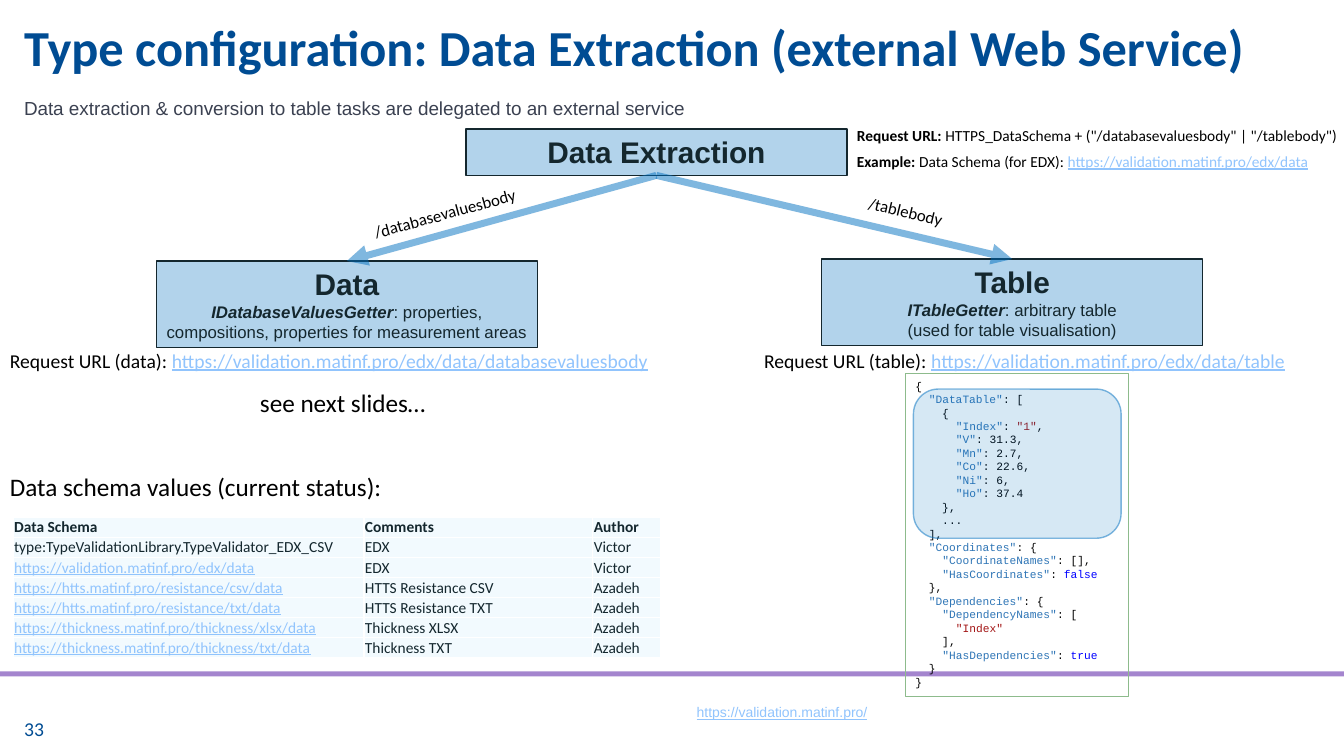
from typing import NamedTuple

from lxml.etree import SubElement as Sub
from pptx import Presentation
from pptx.dml.color import RGBColor as Rgb
from pptx.enum.shapes import MSO_CONNECTOR as Link, MSO_SHAPE as Kind
from pptx.enum.text import MSO_ANCHOR as Anchor, PP_ALIGN as Align
from pptx.oxml.ns import qn
from pptx.util import Inches, Pt

COLORS = {
    "black": "000000", "white": "FFFFFF", "ink": "14272E", "title": "004C93",
    "gray": "3B4151", "link": "91C4FD", "blue": "0070C0", "cyan": "00B0F0",
    "purple": "A485CE", "green": "8DBB8C", "key": "2E75B6", "value": "A31515",
    "bool": "0000FF",
}


class Span(NamedTuple):
    text: str
    color: str = "black"
    size: float = 12
    font: str = "Calibri"
    bold: bool = False
    italic: bool = False


class Label(NamedTuple):
    left: float
    top: float
    width: float
    height: float
    lines: list
    inset: tuple = (0.1, 0.05)
    turn: float = 0
    gap: float = 0


class Node(NamedTuple):
    left: float
    top: float
    height: float
    name: str
    notes: list


def paint(name: str) -> Rgb:
    return Rgb.from_string(COLORS[name])


def fade(root, percent: int) -> None:
    """Set the opacity of the colours that have none yet."""
    for tone in root.iter(qn("a:srgbClr")):
        if not len(tone):
            Sub(tone, qn("a:alpha"), val=str(percent * 1000))


def write(frame, lines: list, align=Align.LEFT, gap: float = 0, pitch: float = 0) -> None:
    for row, spans in enumerate(lines):
        para = frame.add_paragraph() if row else frame.paragraphs[0]
        para.alignment = align
        if row and gap:
            para.space_before = Pt(gap)
        if pitch:
            para.line_spacing = Pt(pitch)
        for span in spans:
            run = para.add_run()
            run.text = span.text
            font = run.font
            font.name, font.size = span.font, Pt(span.size)
            font.bold, font.italic = span.bold, span.italic
            font.color.rgb = paint(span.color)
            font.underline = span.color == "link"


def add_label(slide, label: Label) -> None:
    box = slide.shapes.add_textbox(*map(Inches, label[:4]))
    box.rotation = label.turn
    frame = box.text_frame
    frame.word_wrap = True
    side, edge = map(Inches, label.inset)
    frame.margin_left = frame.margin_right = side
    frame.margin_top = frame.margin_bottom = edge
    write(frame, label.lines, gap=label.gap)


def add_box(slide, kind, place: tuple, fill: str = "", alpha: int = 100,
            line: str = "", width: float = 1, clear: int = 100):
    box = slide.shapes.add_shape(kind, *map(Inches, place))
    box.shadow.inherit = False
    if fill:
        box.fill.solid()
        box.fill.fore_color.rgb = paint(fill)
        fade(box.element.spPr, alpha)
    else:
        box.fill.background()
    if line:
        box.line.color.rgb = paint(line)
        box.line.width = Pt(width)
        fade(box.element.spPr, clear)
    else:
        box.line.fill.background()
    box.text_frame.word_wrap = True
    box.text_frame.vertical_anchor = Anchor.TOP
    return box


def add_node(slide, node: Node):
    box = add_box(slide, Kind.RECTANGLE, (node.left, node.top, 3.78, node.height),
                  "blue", 30, "ink")
    head = [Span(node.name, "ink", 21.3, "Arial", True)]
    write(box.text_frame, [head, *node.notes], Align.CENTER)
    return box


def join(slide, start, end) -> None:
    arrow = slide.shapes.add_connector(Link.STRAIGHT, 0, 0, 0, 0)
    arrow.begin_connect(start, 2)
    arrow.end_connect(end, 0)
    arrow.line.color.rgb = paint("blue")
    arrow.line.width = Pt(5)
    props = arrow.element.spPr
    fade(props, 50)
    Sub(props.find(qn("a:ln")), qn("a:tailEnd"), type="triangle")
    Sub(props, qn("a:effectLst"))


def add_grid(slide, rows: list) -> None:
    grid = slide.shapes.add_table(len(rows), 3, Inches(0.13), Inches(5.13),
                                  Inches(6.42), Inches(1.33)).table
    grid.first_row = grid.horz_banding = False
    for col, width in zip(grid.columns, (3.48, 2.27, 0.67)):
        col.width = Inches(width)
    for r, row in enumerate(rows):
        for c, text in enumerate(row):
            cell = grid.cell(r, c)
            cell.margin_left = cell.margin_right = cell.margin_top = Inches(0.01)
            cell.margin_bottom = 0
            cell.vertical_anchor = Anchor.BOTTOM
            tone = "link" if text.startswith("https") else "ink"
            write(cell.text_frame, [[Span(text, tone, 11, bold=r == 0)]])
            props = cell._tc.get_or_add_tcPr()
            for side in ("lnL", "lnR", "lnT", "lnB"):
                edge = Sub(props, qn(f"a:{side}"), w=str(Pt(1)))
                Sub(Sub(edge, qn("a:solidFill")), qn("a:srgbClr"), val=COLORS["white"])
            cell.fill.solid()
            cell.fill.fore_color.rgb = paint("cyan")
            fade(props.find(qn("a:solidFill")), 5)


def tint(line: str) -> list:
    """Split a line of JSON into coloured spans."""
    parts = line.split('"')
    spans = []
    for i, part in enumerate(parts):
        if i % 2:
            tone = "key" if parts[i + 1].startswith(":") else "value"
            spans.append((f'"{part}"', tone))
            continue
        word = next((w for w in ("true", "false") if part.endswith(w)), "")
        spans += [(part.removesuffix(word), "black"), (word, "bool")]
    return [Span(text, tone, 8, "Courier New") for text, tone in spans if text]


SITE = "https://validation.matinf.pro/"
EDX = SITE + "edx/data"
LABELS = [
    Label(0.24, 0.12, 12.87, 0.87, [[Span(
        "Type configuration: Data Extraction (external Web Service)", "title", 36, bold=True)]],
        (0, 0.04)),
    Label(0.14, 0.91, 12.86, 0.33, [[Span(
        "Data extraction & conversion to table tasks are delegated to an external service",
        "gray", 13.5, "Arial")]]),
    Label(0, 3.41, 7, 0.34, [[Span("Request URL (data): ", size=14),
                              Span(EDX + "/databasevaluesbody", "link", 14)]]),
    Label(7.48, 3.41, 5.85, 0.34, [[Span("Request URL (table): ", size=14),
                                    Span(EDX + "/table", "link", 14)]]),
    Label(2.48, 3.79, 3, 0.4, [[Span("see next slides…", size=18)]]),
    Label(0, 4.63, 6, 0.4, [[Span("Data schema values (current status):", size=18)]]),
    Label(3.59, 1.95, 1.77, 0.3, [[Span("/databasevaluesbody")]], turn=344.8),
    Label(8.51, 1.97, 1.12, 0.3, [[Span("/tablebody")]], turn=13.7),
    Label(8.4, 1.2, 5.03, 0.56, [
        [Span("Request URL: ", size=11, bold=True),
         Span('HTTPS_DataSchema + ("/databasevaluesbody" | "/tablebody")', size=11)],
        [Span("Example: ", size=11, bold=True), Span("Data Schema (for EDX): ", size=11),
         Span(EDX, "link", 11)]], gap=5.5),
    Label(6.87, 6.96, 5.93, 0.53, [[Span(SITE, "link", 10, "Arial")]], (0.04, 0.02)),
    Label(0.24, 7.06, 0.53, 0.34, [[Span("33", "title", 14)]], (0, 0.05)),
]
NOTE = Span("", "ink", 12, "Arial")
NODES = [
    Node(4.62, 1.28, 0.46, "Data Extraction", []),
    Node(1.55, 2.59, 0.86, "Data", [
        [NOTE._replace(text="IDatabaseValuesGetter", bold=True, italic=True),
         NOTE._replace(text=": properties, compositions, properties for measurement areas")]]),
    Node(8.15, 2.57, 0.86, "Table", [
        [NOTE._replace(text="ITableGetter", bold=True, italic=True),
         NOTE._replace(text=": arbitrary table")],
        [NOTE._replace(text="(used for table visualisation)")]]),
]
SCHEMAS = [
    ("Data Schema", "Comments", "Author"),
    ("type:TypeValidationLibrary.TypeValidator_EDX_CSV", "EDX", "Victor"),
    (EDX, "EDX", "Victor"),
    ("https://htts.matinf.pro/resistance/csv/data", "HTTS Resistance CSV", "Azadeh"),
    ("https://htts.matinf.pro/resistance/txt/data", "HTTS Resistance TXT", "Azadeh"),
    ("https://thickness.matinf.pro/thickness/xlsx/data", "Thickness XLSX", "Azadeh"),
    ("https://thickness.matinf.pro/thickness/txt/data", "Thickness TXT", "Azadeh"),
]
JSON = """{
  "DataTable": [
    {
      "Index": "1",
      "V": 31.3,
      "Mn": 2.7,
      "Co": 22.6,
      "Ni": 6,
      "Ho": 37.4
    },
    ...
  ],
  "Coordinates": {
    "CoordinateNames": [],
    "HasCoordinates": false
  },
  "Dependencies": {
    "DependencyNames": [
      "Index"
    ],
    "HasDependencies": true
  }
}"""


def main() -> None:
    deck = Presentation()
    deck.slide_width, deck.slide_height = Inches(13.33), Inches(7.5)
    slide = deck.slides.add_slide(deck.slide_layouts[6])
    add_box(slide, Kind.RECTANGLE, (0, 6.66, 13.33, 0.05), "purple")
    add_grid(slide, SCHEMAS)
    root, *leaves = [add_node(slide, node) for node in NODES]
    for leaf in leaves:
        join(slide, root, leaf)
    for label in LABELS:
        add_label(slide, label)
    code = add_box(slide, Kind.RECTANGLE, (8.98, 3.71, 2.21, 3.2), line="green", width=0.75)
    write(code.text_frame, [tint(line) for line in JSON.splitlines()], pitch=9.6)
    add_box(slide, Kind.ROUNDED_RECTANGLE, (9.06, 3.86, 2.06, 1.48),
            "blue", 16, "blue", clear=50)
    deck.save("out.pptx")


if __name__ == "__main__":
    main()
